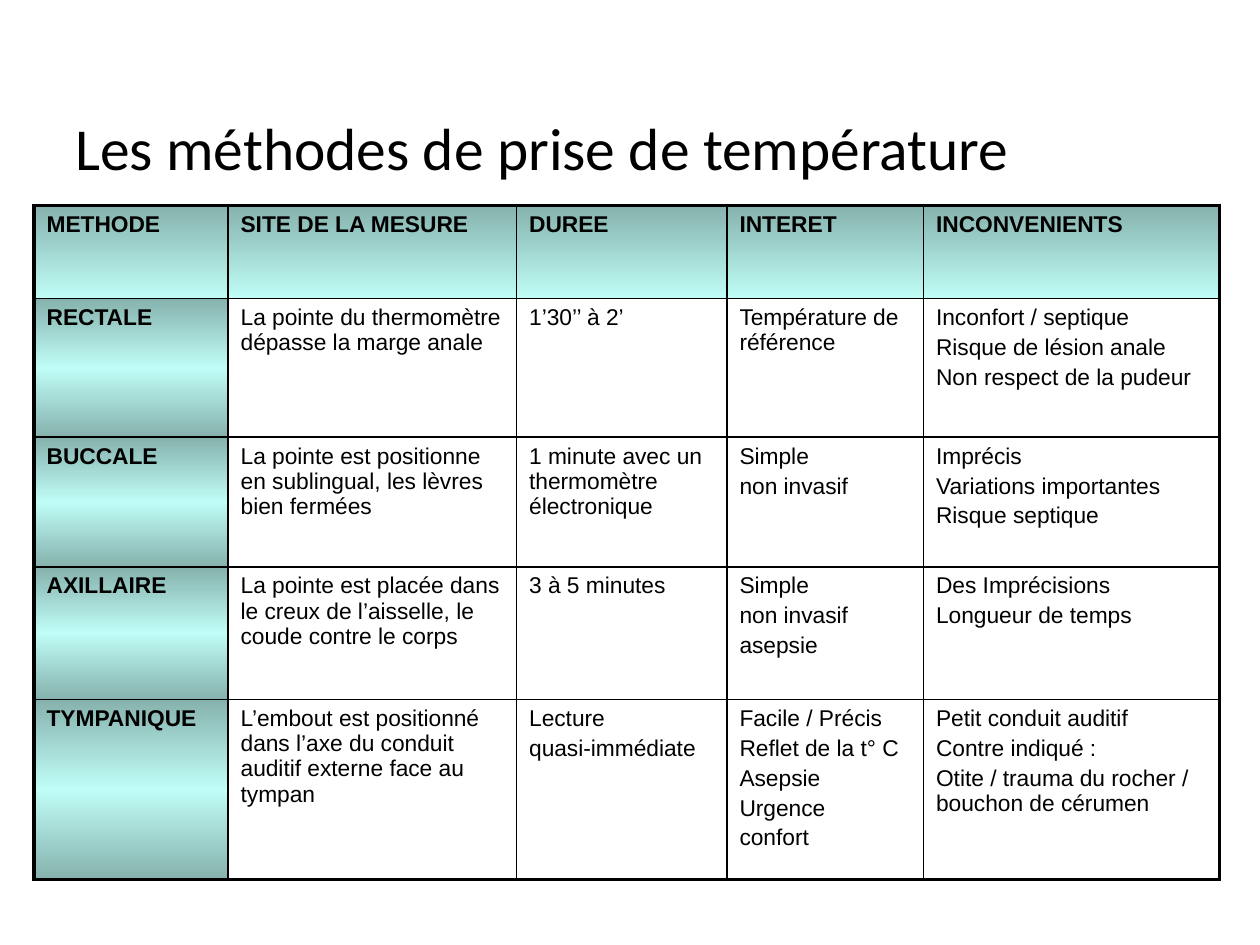
from lxml import etree
from pptx import Presentation
from pptx.dml.color import RGBColor
from pptx.enum.text import MSO_ANCHOR
from pptx.oxml.ns import qn
from pptx.util import Inches, Pt

BOTTOM = MSO_ANCHOR.BOTTOM
BLACK = "000000"
DARK = "86B2AD"
LIGHT = "BFFDF6"
THIN, THICK = 1, 2.25
COLUMNS = [1.54, 2.29, 1.67, 1.56, 2.35]
ROWS = [0.74, 1.1, 1.03, 1.05, 1.43]
METHODS = [
    ["METHODE", "SITE DE LA MESURE", "DUREE", "INTERET", "INCONVENIENTS"],
    ["RECTALE", "La pointe du thermomètre dépasse la marge anale",
     "1’30’’ à 2’", "Température de référence",
     "Inconfort / septique\nRisque de lésion anale\nNon respect de la pudeur"],
    ["BUCCALE", "La pointe est positionne en sublingual, les lèvres bien fermées",
     "1 minute avec un thermomètre électronique", "Simple\nnon invasif",
     "Imprécis\nVariations importantes\nRisque septique"],
    ["AXILLAIRE", "La pointe est placée dans le creux de l’aisselle, le coude contre le corps",
     "3 à 5 minutes", "Simple\nnon invasif\nasepsie",
     "Des Imprécisions\nLongueur de temps"],
    ["TYMPANIQUE", "L’embout est positionné dans l’axe du conduit auditif externe face au tympan",
     "Lecture\nquasi-immédiate",
     "Facile / Précis\nReflet de la t° C\nAsepsie\nUrgence\nconfort",
     "Petit conduit auditif\nContre indiqué :\nOtite / trauma du rocher / bouchon de cérumen"],
]


def color(value):
    return RGBColor.from_string(value)


def set_font(p, name, size, bold=False):
    p.font.name = name
    p.font.size = Pt(size)
    p.font.bold = bold
    p.font.color.rgb = color(BLACK)


def add_title(s, text):
    sp = s.shapes.add_textbox(Inches(0.5), Inches(0.3), Inches(9), Inches(1.25))
    tf = sp.text_frame
    tf.word_wrap = True
    tf.vertical_anchor = BOTTOM
    tf.margin_bottom = Inches(0.1)
    p = tf.paragraphs[0]
    p.text = text
    set_font(p, "Calibri", 34)


def add_border(cell, side, width):
    line = etree.SubElement(cell._tc.get_or_add_tcPr(), qn("a:" + side), w=str(Pt(width)))
    fill = etree.SubElement(line, qn("a:solidFill"))
    etree.SubElement(fill, qn("a:srgbClr"), val=BLACK)


def fill_gradient(cell, colors):
    grad = etree.SubElement(cell._tc.get_or_add_tcPr(), qn("a:gradFill"), rotWithShape="1")
    stops = etree.SubElement(grad, qn("a:gsLst"))
    for i, value in enumerate(colors):
        pos = 100000 * i // (len(colors) - 1)
        stop = etree.SubElement(stops, qn("a:gs"), pos=str(pos))
        etree.SubElement(stop, qn("a:srgbClr"), val=value)
    etree.SubElement(grad, qn("a:lin"), ang="5400000", scaled="1")


def write_cell(cell, text, bold):
    tf = cell.text_frame
    for i, line in enumerate(text.split("\n")):
        p = tf.add_paragraph() if i else tf.paragraphs[0]
        p.text = line
        if i:
            p.space_before = Pt(2.6)
        set_font(p, "Arial", 13, bold)


def style_cell(cell, row, col):
    edges = {"lnL": col == 0, "lnR": col == len(COLUMNS) - 1,
             "lnT": row == 0, "lnB": row == len(ROWS) - 1}
    for side, outer in edges.items():
        add_border(cell, side, THICK if outer else THIN)
    if row == 0:
        fill_gradient(cell, [DARK, LIGHT])
    elif col == 0:
        fill_gradient(cell, [DARK, LIGHT, DARK])
    else:
        cell.fill.background()


def add_methods_table(s):
    table = s.shapes.add_table(len(ROWS), len(COLUMNS), Inches(0.27), Inches(1.63),
                               Inches(sum(COLUMNS)), Inches(sum(ROWS))).table
    table.horz_banding = False
    for column, width in zip(table.columns, COLUMNS):
        column.width = Inches(width)
    for row, height in zip(table.rows, ROWS):
        row.height = Inches(height)
    for i, texts in enumerate(METHODS):
        for j, text in enumerate(texts):
            cell = table.cell(i, j)
            write_cell(cell, text, i == 0 or j == 0)
            style_cell(cell, i, j)


def main():
    prs = Presentation()
    prs.slide_width = Inches(10)
    prs.slide_height = Inches(7.5)
    s = prs.slides.add_slide(prs.slide_layouts[6])
    add_title(s, "Les méthodes de prise de température")
    add_methods_table(s)
    prs.save("out.pptx")


if __name__ == "__main__":
    main()
